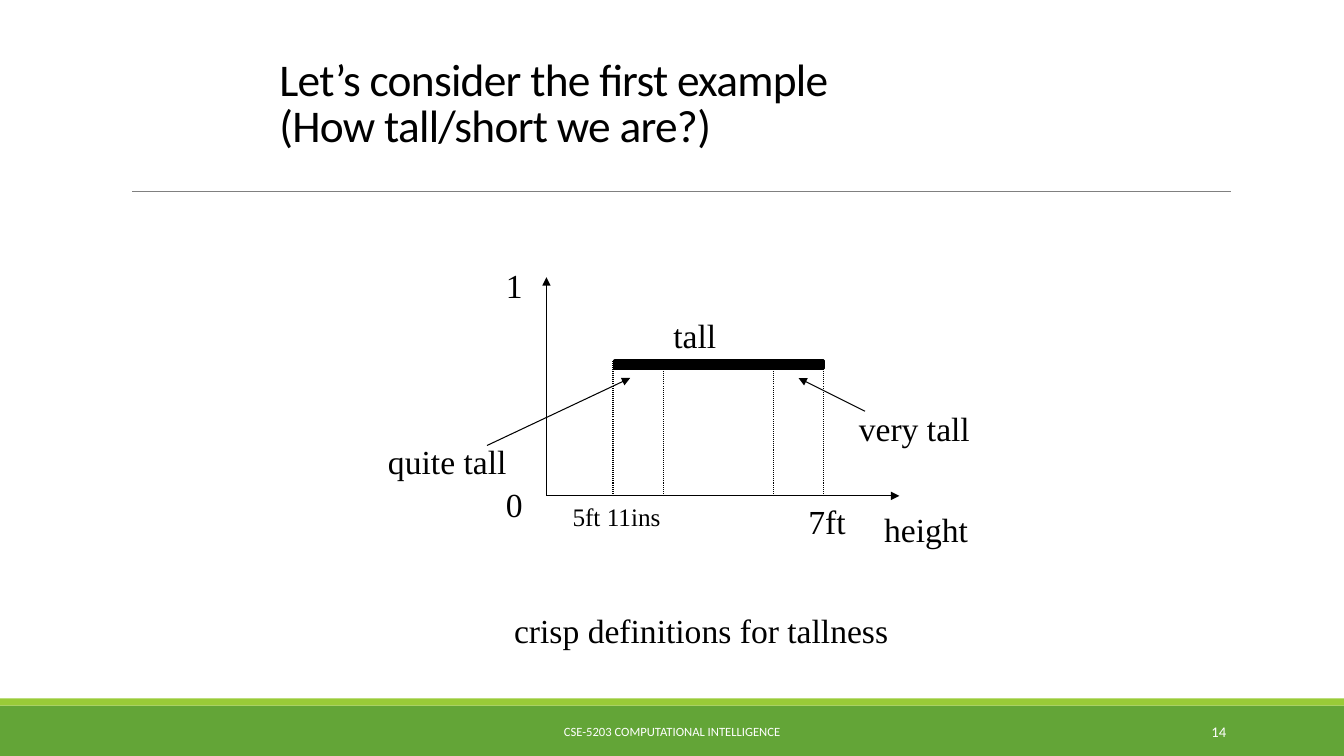
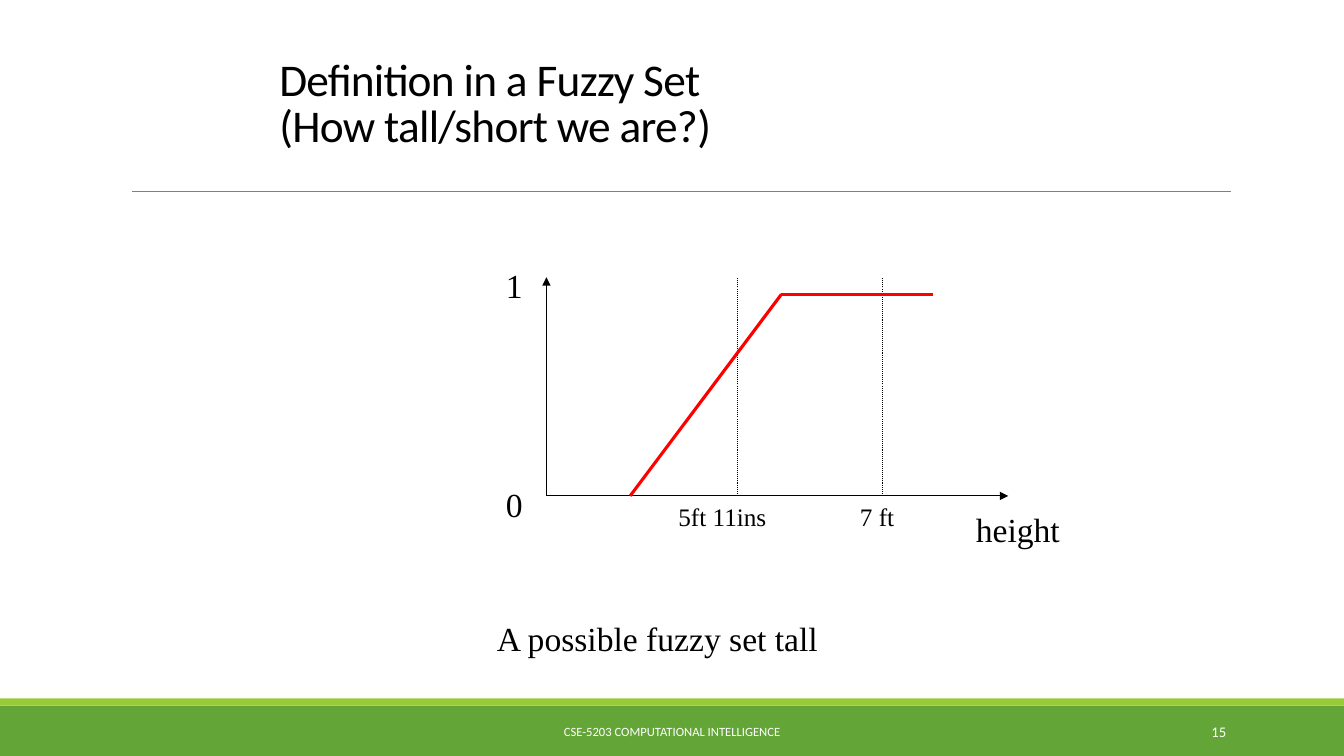
"""Build two slides that contrast a crisp and a fuzzy definition of tallness."""
from pptx import Presentation
from pptx import util as u
from pptx.dml.color import RGBColor
from pptx.enum import dml, shapes, text
from pptx.oxml.ns import qn
from lxml import etree

COLORS = {"band": "63A537", "stripe": "99CB38", "rule": "808080",
          "ink": "000000", "curve": "FF0000", "paper": "FFFFFF"}
SERIF, SANS = "Times New Roman", "Calibri"
ORIGIN_X, AXIS_Y, AXIS_TOP = 5.42, 4.92, 2.75
FIRST_NUMBER = 14


def draw_line(slide, start, end, color="ink", width=0.75, dotted=False, arrow=False):
    """Draw a straight line, optionally dotted or with an arrowhead at its end."""
    line = slide.shapes.add_connector(
        shapes.MSO_CONNECTOR.STRAIGHT, *[u.Inches(v) for v in (*start, *end)])
    line.line.color.rgb = RGBColor.from_string(COLORS[color])
    line.line.width = u.Pt(width)
    if dotted:
        line.line.dash_style = dml.MSO_LINE.ROUND_DOT
    properties = line.element.spPr
    if arrow:
        etree.SubElement(properties.find(qn("a:ln")), qn("a:tailEnd"), type="triangle")
    etree.SubElement(properties, qn("a:effectLst"))


def add_label(slide, wording, box, size=24, font=SERIF, color="ink",
              align=text.PP_ALIGN.LEFT, anchor=text.MSO_ANCHOR.TOP):
    """Add one line of text in a box given as left, top, width, height."""
    frame = slide.shapes.add_textbox(*[u.Inches(v) for v in box]).text_frame
    frame.word_wrap = True
    frame.vertical_anchor = anchor
    frame.text = wording
    frame.paragraphs[0].alignment = align
    style = frame.paragraphs[0].runs[0].font
    style.name, style.size = font, u.Pt(size)
    style.color.rgb = RGBColor.from_string(COLORS[color])


prs = Presentation()
prs.slide_width, prs.slide_height = u.Inches(13.33), u.Inches(7.5)
layout = prs.slide_layouts[5]
title_style = prs.slide_master.element.find(f".//{qn('p:titleStyle')}//{qn('a:defRPr')}")
title_style.set("sz", "3240")
title_style.set("spc", "-50")
for placeholder in list(layout.placeholders)[1:]:
    layout.shapes.element.remove(placeholder.element)

titles = ["Let’s consider the first example\v(How tall/short we are?)",
          "Definition in a Fuzzy Set\v(How tall/short we are?)"]
crisp, fuzzy = [prs.slides.add_slide(layout) for wording in titles]

for color, top, height in [("band", 7, 0.5), ("stripe", 6.93, 0.07)]:
    strip = crisp.shapes.add_shape(shapes.MSO_SHAPE.RECTANGLE, 0, u.Inches(top),
                                   prs.slide_width, u.Inches(height))
    strip.shadow.inherit = False
    strip.fill.solid()
    strip.fill.fore_color.rgb = RGBColor.from_string(COLORS[color])
    strip.line.fill.background()
draw_line(crisp, (1.31, 1.9), (12.21, 1.9), "rule", 0.5)
for position, decoration in enumerate(list(crisp.shapes)[1:], 2):
    layout.shapes.element.insert(position, decoration.element)

axis_ends = [8.92, 10]
height_lefts = [8.67, 9.58]
for index, slide in enumerate((crisp, fuzzy)):
    title = slide.shapes.title
    title.left, title.top = u.Inches(2.67), u.Inches(0.56)
    title.width, title.height = u.Inches(8.5), u.Inches(1)
    title.text_frame.text = titles[index]
    title.text_frame.vertical_anchor = text.MSO_ANCHOR.BOTTOM
    title.text_frame.auto_size = text.MSO_AUTO_SIZE.NONE
    heading = title.text_frame.paragraphs[0]
    heading.alignment, heading.line_spacing = text.PP_ALIGN.LEFT, 0.85
    for run in heading.runs:
        run.font.name = SANS
        run.font.color.rgb = RGBColor.from_string(COLORS["ink"])

    for end in [(ORIGIN_X, AXIS_TOP), (axis_ends[index], AXIS_Y)]:
        draw_line(slide, (ORIGIN_X, AXIS_Y), end, arrow=True)
    add_label(slide, "0", (4.92, 4.75, 0.5, 0.5))
    add_label(slide, "1", (4.92, 2.58, 0.5, 0.5))
    add_label(slide, "height", (height_lefts[index], 5, 1.25, 0.5))

    add_label(slide, "CSE-5203 COMPUTATIONAL INTELLIGENCE", (4.03, 7.06, 5.27, 0.4), 9,
              SANS, "paper", text.PP_ALIGN.CENTER, text.MSO_ANCHOR.MIDDLE)
    add_label(slide, str(FIRST_NUMBER + index), (10.83, 7.06, 1.43, 0.4), 10.5,
              SANS, "paper", text.PP_ALIGN.RIGHT, text.MSO_ANCHOR.MIDDLE)

for x in (6.08, 6.58, 7.67, 8.17):
    draw_line(crisp, (x, AXIS_Y), (x, 3.58), dotted=True)
tall_range = crisp.shapes.add_shape(shapes.MSO_SHAPE.RECTANGLE, u.Inches(6.1), u.Inches(3.58),
                                    u.Inches(2.07), u.Inches(0.08))
tall_range.shadow.inherit = False
tall_range.fill.solid()
tall_range.fill.fore_color.rgb = RGBColor.from_string(COLORS["ink"])
tall_range.line.color.rgb = RGBColor.from_string(COLORS["ink"])
tall_range.line.width = u.Pt(2.25)
for start, end in [((8.58, 4.08), (7.92, 3.75)), ((4.83, 4.42), (6.25, 3.75))]:
    draw_line(crisp, start, end, arrow=True)

for x in (7.31, 8.75):
    draw_line(fuzzy, (x, AXIS_Y), (x, AXIS_TOP), dotted=True)
for start, end in [((6.25, AXIS_Y), (7.75, 2.92)), ((7.75, 2.92), (9.25, 2.92))]:
    draw_line(fuzzy, start, end, "curve", 2.25)

for slide, wording, box, size in [
    (crisp, "5ft 11ins", (5.58, AXIS_Y, 1.25, 0.4), 18),
    (crisp, "7ft", (7.92, AXIS_Y, 0.67, 0.5), 24),
    (crisp, "tall", (6.58, 3.08, 1.25, 0.5), 24),
    (crisp, "very tall", (8.42, 4, 1.5, 0.5), 24),
    (crisp, "quite tall", (3.75, 4.33, 1.5, 0.5), 24),
    (crisp, "crisp definitions for tallness", (5, 6, 4.25, 0.5), 24),
    (fuzzy, "5ft 11ins", (6.63, AXIS_Y, 1.45, 0.4), 18),
    (fuzzy, "7 ft", (8.43, AXIS_Y, 1.25, 0.4), 18),
    (fuzzy, "A possible fuzzy set tall", (4.83, 6.08, 4.58, 0.5), 24),
]:
    add_label(slide, wording, box, size)

prs.save("out.pptx")
